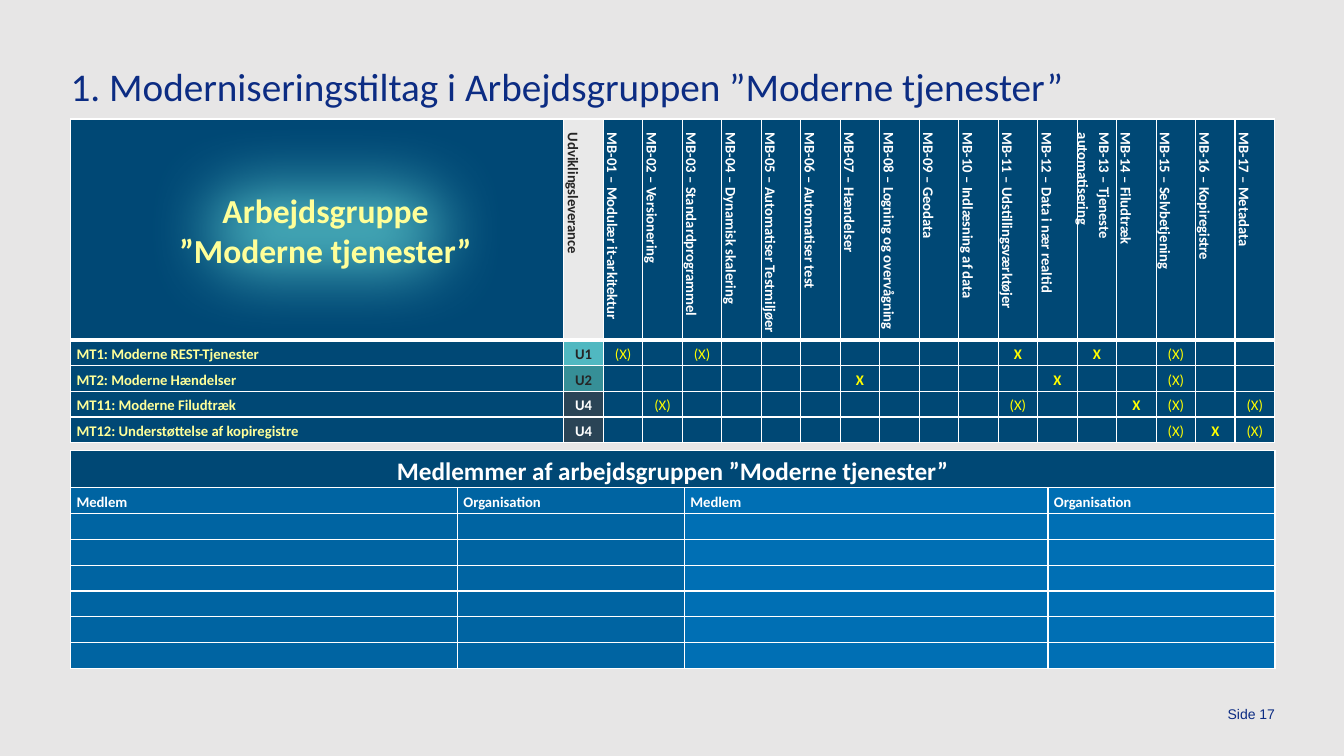
from dataclasses import dataclass

from lxml import etree
from pptx import Presentation
from pptx.dml.color import RGBColor
from pptx.enum import shapes, text
from pptx.oxml import ns
from pptx.util import Cm, Pt

NAVY, WHITE, DARK = "004875", "FFFFFF", "252525"
CREAM, YELLOW, INK, TEAL = "FFFF99", "FFFF00", "0C2C83", "50B8C1"
BLUES = ["0064A2", "0064A2", "006FB4", "006FB4"]
LEFT, WIDTH, ROW = 1.78, 30.35, 0.65
HEAD, TITLE = 5.56, 0.93
NAME = 12.43
UNIT = "Udviklingsleverance"
GOALS = [
    "Modulær it-arkitektur", "Versionering", "Standardprogrammel",
    "Dynamisk skalering", "Automatiser Testmiljøer", "Automatiser test",
    "Hændelser", "Logning og overvågning", "Geodata", "Indlæsning af data",
    "Udstillingsværktøjer", "Data i nær realtid", "Tjeneste automatisering",
    "Filudtræk", "Selvbetjening", "Kopiregistre", "Metadata",
]


@dataclass
class Step:
    name: str
    unit: str
    fill: str
    ink: str
    main: tuple[int, ...]
    minor: tuple[int, ...]


@dataclass
class Look:
    fill: str = NAVY
    ink: str = WHITE
    bold: bool = True
    size: float = 10.5
    mid: bool = False
    vert: bool = False
    top: int = 1
    base: int = 1


STEPS = [
    Step("MT1: Moderne REST-Tjenester", "U1", TEAL, DARK, (11, 13), (1, 3, 15)),
    Step("MT2: Moderne Hændelser", "U2", "368F97", DARK, (7, 12), (15,)),
    Step("MT11: Moderne Filudtræk", "U4", "2A4456", WHITE, (14,), (2, 11, 15, 17)),
    Step("MT12: Understøttelse af kopiregistre", "U4", "2A4456", WHITE,
         (16,), (15, 17)),
]


def paint(fill, color: str) -> None:
    """Give a fill a solid colour."""
    fill.solid()
    fill.fore_color.rgb = RGBColor.from_string(color)


def style(para, size: float, color: str, bold: bool = False,
          face: str = "Calibri") -> None:
    for run in para.runs:
        run.font.size, run.font.bold, run.font.name = Pt(size), bold, face
        paint(run.font.fill, color)


def clear(frame) -> None:
    """Remove the insets of a text frame."""
    frame.margin_left = frame.margin_right = 0
    frame.margin_top = frame.margin_bottom = 0
    frame.word_wrap = True


def edge(props, tag: str, width: int) -> None:
    line = etree.SubElement(props, ns.qn(f"a:{tag}"), w=str(Pt(width)))
    solid = etree.SubElement(line, ns.qn("a:solidFill"))
    etree.SubElement(solid, ns.qn("a:srgbClr"), val=WHITE)


def write(cell, words: str, look: Look) -> None:
    """Fill one table cell with its text, borders and colour."""
    cell.margin_left = cell.margin_right = Cm(0.15)
    cell.margin_top = cell.margin_bottom = 0
    cell.vertical_anchor = text.MSO_ANCHOR.MIDDLE
    props = cell._tc.get_or_add_tcPr()
    for tag, width in (("lnL", 1), ("lnR", 1), ("lnT", look.top), ("lnB", look.base)):
        edge(props, tag, width)
    paint(cell.fill, look.fill)
    cell.text_frame.text = words
    para = cell.text_frame.paragraphs[0]
    para.line_spacing, para.space_before = 1.2, Pt(4)
    if look.mid:
        para.alignment = text.PP_ALIGN.CENTER
    if look.vert:
        props.set("vert", "vert")
        indent = para._p.get_or_add_pPr()
        indent.set("marL", str(Cm(0.2)))
        indent.set("indent", "0")
    style(para, look.size, look.ink, look.bold)
    if not words:
        etree.SubElement(para._p, ns.qn("a:endParaRPr"), sz="1050")


def grid(slide, top: float, cols: list[float], rows: list[float]):
    """Add a plain table with the given column widths and row heights."""
    table = slide.shapes.add_table(len(rows), len(cols), Cm(LEFT), Cm(top),
                                   Cm(sum(cols)), Cm(sum(rows))).table
    table.first_row = table.horz_banding = False
    for col, width in zip(table.columns, cols):
        col.width = Cm(width)
    for row, height in zip(table.rows, rows):
        row.height = Cm(height)
    return table


def matrix(slide) -> None:
    count = len(GOALS) + 1
    step = (WIDTH - NAME) / count
    table = grid(slide, 3, [NAME] + [step] * count, [HEAD] + [ROW] * len(STEPS))
    # Header row
    write(table.cell(0, 0), "", Look(base=3))
    write(table.cell(0, 1), UNIT, Look("E9E9E9", DARK, vert=True, base=3))
    for num, goal in enumerate(GOALS, 1):
        write(table.cell(0, num + 1), f"MB-{num:02} – {goal}",
              Look(vert=True, base=3))
    # One row for each measure
    for row, item in enumerate(STEPS, 1):
        top = 3 if row == 1 else 1
        write(table.cell(row, 0), item.name, Look(ink=CREAM, top=top))
        write(table.cell(row, 1), item.unit,
              Look(item.fill, item.ink, mid=True, top=top))
        for num in range(1, count):
            main = num in item.main
            mark = "X" if main else "(X)" if num in item.minor else ""
            write(table.cell(row, num + 1), mark,
                  Look(ink=YELLOW, bold=main, mid=True, top=top))


def members(slide) -> None:
    table = grid(slide, 11.36, [9.75, 5.72, 9.16, 5.72], [TITLE] + [ROW] * 7)
    table.cell(0, 0).merge(table.cell(0, 3))
    write(table.cell(0, 0), "Medlemmer af arbejdsgruppen ”Moderne tjenester”",
          Look(size=18, mid=True))
    for row in range(1, 8):
        for col, fill in enumerate(BLUES):
            label = ("Medlem", "Organisation")[col % 2] if row == 1 else ""
            write(table.cell(row, col), label, Look(fill))


def badge(slide) -> None:
    """Add the soft-edged group name."""
    shape = slide.shapes.add_shape(shapes.MSO_SHAPE.ROUNDED_RECTANGLE,
                                   Cm(3.53), Cm(3.05), Cm(9.35), Cm(5.49))
    shape.shadow.inherit = False
    paint(shape.fill, TEAL)
    shape.line.fill.background()
    soft = shape._element.spPr.find(ns.qn("a:effectLst"))
    etree.SubElement(soft, ns.qn("a:softEdge"), rad=str(Pt(50)))
    frame = shape.text_frame
    frame.word_wrap = True
    frame.vertical_anchor = text.MSO_ANCHOR.MIDDLE
    frame.text = "Arbejdsgruppe ”Moderne tjenester”"
    frame.paragraphs[0].alignment = text.PP_ALIGN.CENTER
    style(frame.paragraphs[0], 24, CREAM, True)


def main() -> None:
    deck = Presentation()
    deck.slide_width, deck.slide_height = Cm(33.87), Cm(19.05)
    slide = deck.slides.add_slide(deck.slide_layouts[5])
    paint(slide.background.fill, "E7E6E6")

    # Title
    title = slide.shapes.title
    title.left, title.top, title.width, title.height = (
        Cm(LEFT), Cm(0.94), Cm(30.5), Cm(1.88))
    frame = title.text_frame
    clear(frame)
    frame.auto_size = text.MSO_AUTO_SIZE.NONE
    frame.vertical_anchor = text.MSO_ANCHOR.MIDDLE
    frame.text = "1. Moderniseringstiltag i Arbejdsgruppen ”Moderne tjenester”"
    para = frame.paragraphs[0]
    para.alignment, para.line_spacing = text.PP_ALIGN.LEFT, Pt(49.1)
    style(para, 28, INK)

    # Page number
    page = slide.shapes.add_textbox(Cm(29.92), Cm(17.22), Cm(2.21), Cm(0.97))
    frame = page.text_frame
    clear(frame)
    frame.vertical_anchor = text.MSO_ANCHOR.BOTTOM
    frame.text = "Side 17"
    frame.paragraphs[0].alignment = text.PP_ALIGN.RIGHT
    style(frame.paragraphs[0], 10, INK, face="Arial")

    # Tables and group name
    matrix(slide)
    members(slide)
    badge(slide)
    deck.save("out.pptx")


if __name__ == "__main__":
    main()
